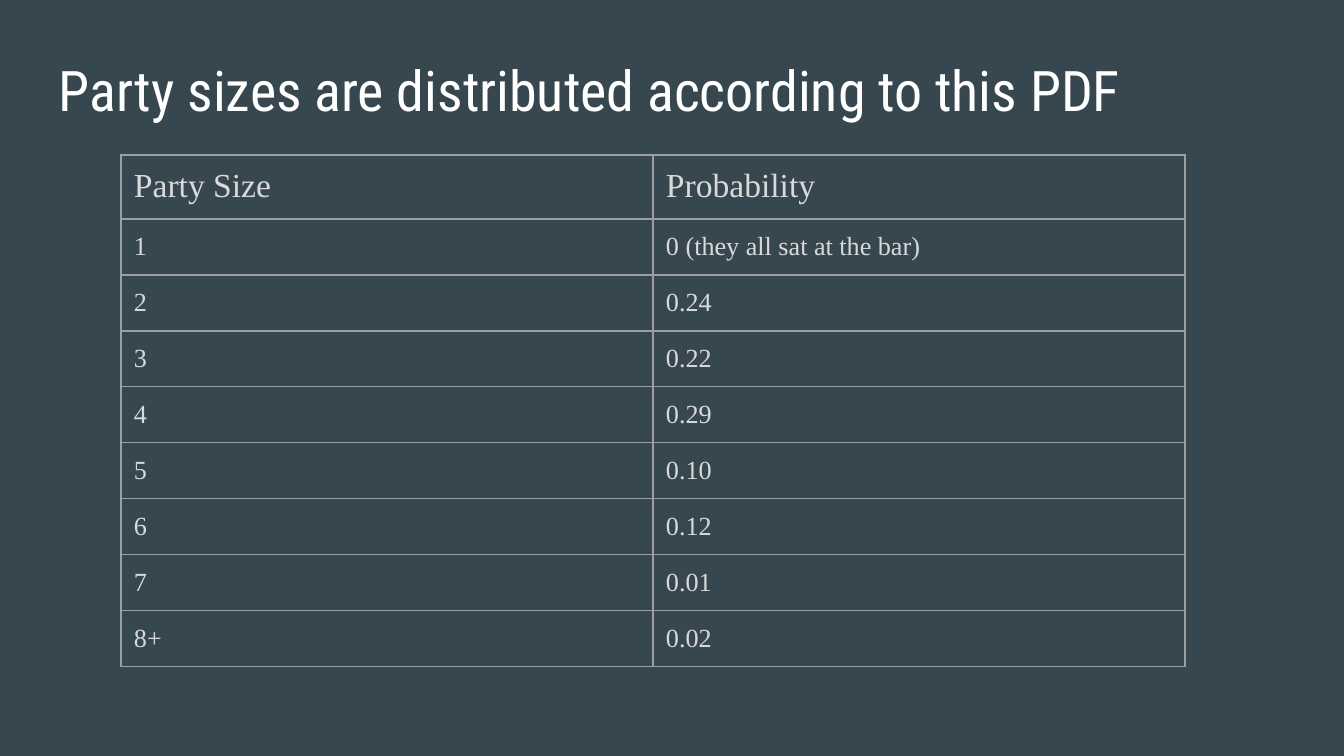
from lxml.etree import SubElement
from pptx import Presentation
from pptx.dml.color import RGBColor as RGB
from pptx.enum.text import MSO_ANCHOR as ANCHOR, MSO_AUTO_SIZE as FIT, PP_ALIGN as ALIGN
from pptx.oxml.ns import qn
from pptx.util import Pt

PX = 914400 / 134.4
INSET = 13
BORDER = Pt(0.75)
COLORS = {"bg": "37474F", "title": "FFFFFF", "text": "D9D9D9", "border": "9E9E9E"}
FONTS = {"title": "Roboto Condensed", "table": "Times New Roman"}

PARTY_SIZES = [
    ("Party Size", "Probability"),
    ("1", "0 (they all sat at the bar)"),
    ("2", "0.24"),
    ("3", "0.22"),
    ("4", "0.29"),
    ("5", "0.10"),
    ("6", "0.12"),
    ("7", "0.01"),
    ("8+", "0.02"),
]


def px(n):
    return round(n * PX)


def set_text(tf, text, font, size, color):
    tf.text = text
    p = tf.paragraphs[0]
    p.alignment = ALIGN.LEFT
    f = p.runs[0].font
    f.name, f.size = font, Pt(size)
    f.color.rgb = RGB.from_string(COLORS[color])


def set_insets(target):
    target.margin_left = target.margin_right = px(INSET)
    target.margin_top = target.margin_bottom = px(INSET)


def set_borders(cell):
    tcPr = cell._tc.get_or_add_tcPr()
    for i, side in enumerate(("a:lnL", "a:lnR", "a:lnT", "a:lnB")):
        ln = tcPr.makeelement(qn(side), {"w": str(BORDER)})
        fill = SubElement(ln, qn("a:solidFill"))
        SubElement(fill, qn("a:srgbClr"), val=COLORS["border"])
        tcPr.insert(i, ln)  # borders come before the fill


def add_title(s, text, x, y, w, h):
    sp = s.shapes.title
    sp.left, sp.top, sp.width, sp.height = px(x), px(y), px(w), px(h)
    tf = sp.text_frame
    set_insets(tf)
    tf.word_wrap = True
    tf.auto_size = FIT.NONE
    tf.vertical_anchor = ANCHOR.TOP
    set_text(tf, text, FONTS["title"], 30, "title")


def add_probability_table(s, rows, x, y, w, header_h, row_h):
    n_cols = len(rows[0])
    h = header_h + row_h * (len(rows) - 1)
    table = s.shapes.add_table(len(rows), n_cols, px(x), px(y), px(w), px(h)).table
    table.horz_banding = False
    for col in table.columns:
        col.width = px(w / n_cols)
    for r, values in enumerate(rows):
        table.rows[r].height = px(row_h if r else header_h)
        for c, value in enumerate(values):
            cell = table.cell(r, c)
            cell.fill.background()
            set_insets(cell)
            set_borders(cell)
            set_text(cell.text_frame, value, FONTS["table"], 14 if r else 18, "text")
            cell.text_frame.paragraphs[0].runs[0].font.bold = False


def main():
    prs = Presentation()
    prs.slide_width, prs.slide_height = px(1344), px(756)
    s = prs.slides.add_slide(prs.slide_layouts[5])  # title only

    # Background
    s.background.fill.solid()
    s.background.fill.fore_color.rgb = RGB.from_string(COLORS["bg"])

    # Title and table
    add_title(s, "Party sizes are distributed according to this PDF", 46, 42, 1253, 85)
    add_probability_table(s, PARTY_SIZES, 121, 155, 1064, 64, 56)

    prs.save("out.pptx")


if __name__ == "__main__":
    main()
